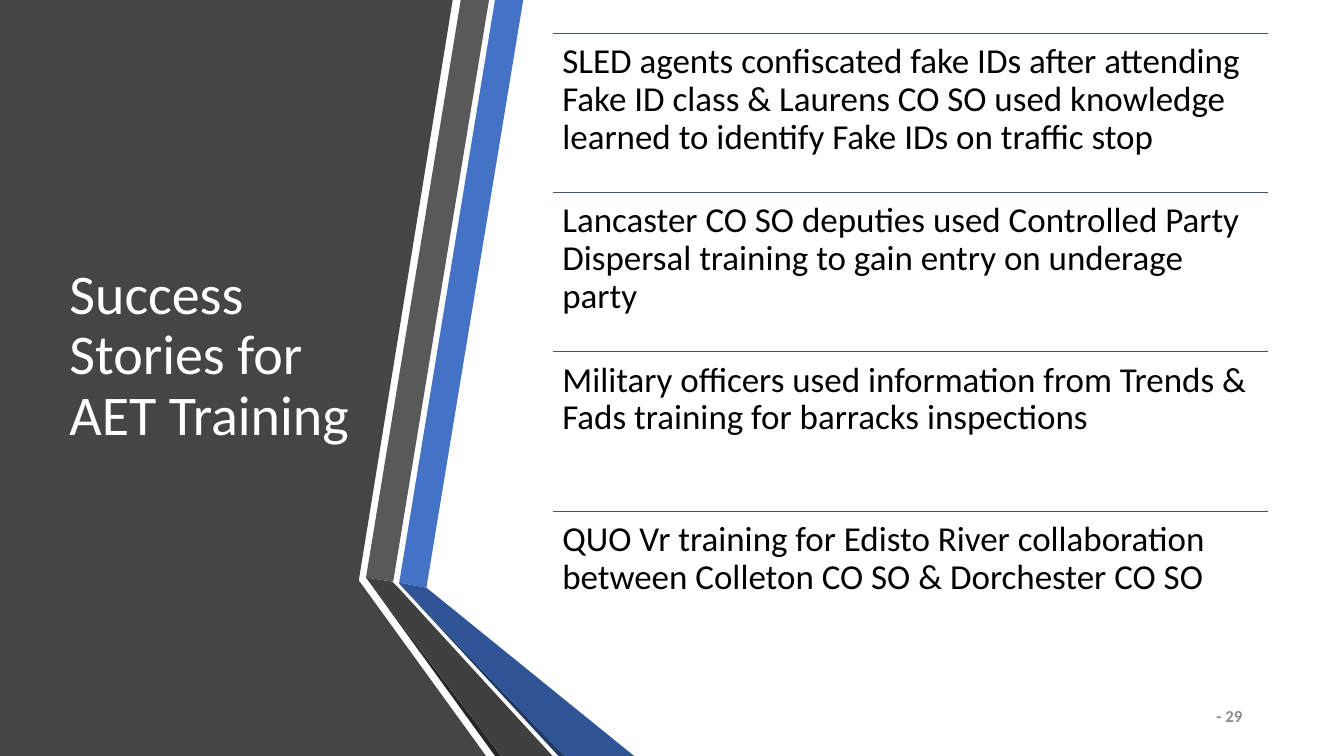
"""Build the slide on success stories for AET training."""
from pptx import Presentation
from pptx import util as u
from pptx.dml.color import RGBColor
from pptx.enum import shapes, text
from pptx.oxml import parse_xml
from pptx.oxml.ns import nsdecls

WHITE = RGBColor(0xFF, 0xFF, 0xFF)
BLACK = RGBColor(0x00, 0x00, 0x00)
NUMBER_GRAY = RGBColor(0x8C, 0x8C, 0x8C)
PANEL_GRAY = RGBColor(0x45, 0x45, 0x45)
BAND_GRAY = RGBColor(0x59, 0x59, 0x59)
FOLD_GRAY = RGBColor(0x40, 0x40, 0x40)
EDGE_GRAY = RGBColor(0x26, 0x26, 0x26)
BAND_BLUE = RGBColor(0x44, 0x72, 0xC4)
FOLD_BLUE = RGBColor(0x2F, 0x55, 0x97)
EDGE_BLUE = RGBColor(0x20, 0x38, 0x64)
RULE_SLATE = RGBColor(0x44, 0x54, 0x6A)

RIBBONS = [
    (PANEL_GRAY, [(0, 0), (4.49, 0), (3.56, 5.75), (3.56, 5.76), (4.82, 7.5), (0, 7.5)]),
    (BAND_BLUE, [(3.96, 5.78), (4.23, 5.83), (5.19, 0), (4.91, 0)]),
    (BAND_GRAY, [(4.85, 0), (4.57, 0), (3.63, 5.73), (3.9, 5.77)]),
    (EDGE_GRAY, [(3.63, 5.73), (4.91, 7.5), (4.97, 7.5)]),
    (EDGE_BLUE, [(3.96, 5.79), (5.54, 7.5), (5.6, 7.5)]),
    (FOLD_BLUE, [(3.96, 5.79), (5.6, 7.5), (6.29, 7.5), (4.23, 5.83), (3.96, 5.78)]),
    (FOLD_GRAY, [(5.48, 7.5), (3.95, 5.83), (3.89, 5.77), (3.63, 5.73), (4.97, 7.5)]),
]

STORIES = [
    "SLED agents confiscated fake IDs after attending Fake ID class & "
    "Laurens CO SO used knowledge learned to identify Fake IDs on traffic stop",
    "Lancaster CO SO deputies used Controlled Party Dispersal training "
    "to gain entry on underage party",
    "Military officers used information from Trends & Fads training "
    "for barracks inspections",
    "QUO Vr training for Edisto River collaboration between "
    "Colleton CO SO & Dorchester CO SO",
]
STORY_LEFT, STORY_TOP = 5.48, 0.33
STORY_WIDTH, STORY_HEIGHT = 7.1, 1.58


class Painter:
    """Hold the font and the current page, and draw each kind of element."""

    def __init__(self, page, font):
        self.page = page
        self.font = font

    def outline(self, color, points):
        """Draw a closed filled outline through points in inches."""
        corners = [(u.Inches(x), u.Inches(y)) for x, y in points]
        builder = self.page.shapes.build_freeform(*corners[0], scale=1.0)
        builder.add_line_segments(corners[1:], close=True)
        shape = builder.convert_to_shape()
        shape.shadow.inherit = False
        shape.fill.solid()
        shape.fill.fore_color.rgb = color
        shape.line.fill.background()

    def rule(self, left, top, width):
        """Draw a thin horizontal line."""
        line = self.page.shapes.add_connector(
            shapes.MSO_CONNECTOR.STRAIGHT, u.Inches(left), u.Inches(top),
            u.Inches(left + width), u.Inches(top))
        line.line.color.rgb = RULE_SLATE
        line.line.width = u.Pt(0.5)
        line._element.spPr.append(parse_xml(f"<a:effectLst {nsdecls('a')}/>"))

    def label(self, area, words, size, color, bold=False, frame=None, para=None):
        """Write a wrapped text box with the given frame and paragraph formats."""
        box = self.page.shapes.add_textbox(*map(u.Inches, area))
        paragraph = box.text_frame.paragraphs[0]
        span = paragraph.add_run()
        span.text = words
        span.font.color.rgb = color
        formats = [
            (box.text_frame, {"word_wrap": True, **(frame or {})}),
            (paragraph, para or {}),
            (span.font, {"name": self.font, "size": u.Pt(size), "bold": bold}),
        ]
        for target, values in formats:
            for name, value in values.items():
                setattr(target, name, value)


def main():
    """Compose the page and save the deck."""
    deck = Presentation()
    deck.slide_width, deck.slide_height = u.Inches(13.33), u.Inches(7.5)
    painter = Painter(deck.slides.add_slide(deck.slide_layouts[6]), "Calibri")

    for color, points in RIBBONS:
        painter.outline(color, points)

    middle = {"vertical_anchor": text.MSO_ANCHOR.MIDDLE}
    painter.label((0.59, 0.75, 3.04, 5.58), "Success Stories for AET Training",
                  40, WHITE, frame=middle, para={"line_spacing": 0.9})
    painter.label((11.23, 6.9, 1.19, 0.4), "- 29", 12, NUMBER_GRAY, bold=True,
                  frame=middle,
                  para={"alignment": text.PP_ALIGN.RIGHT, "space_after": u.Pt(6)})

    sides = ("left", "top", "right", "bottom")
    insets = {f"margin_{side}": u.Inches(0.1) for side in sides}
    for row, story in enumerate(STORIES):
        top = STORY_TOP + row * STORY_HEIGHT
        painter.rule(STORY_LEFT, top, STORY_WIDTH)
        painter.label((STORY_LEFT, top, STORY_WIDTH, STORY_HEIGHT), story, 25, BLACK,
                      frame=insets,
                      para={"line_spacing": 0.9, "space_after": u.Pt(9)})

    deck.save("out.pptx")


if __name__ == "__main__":
    main()
